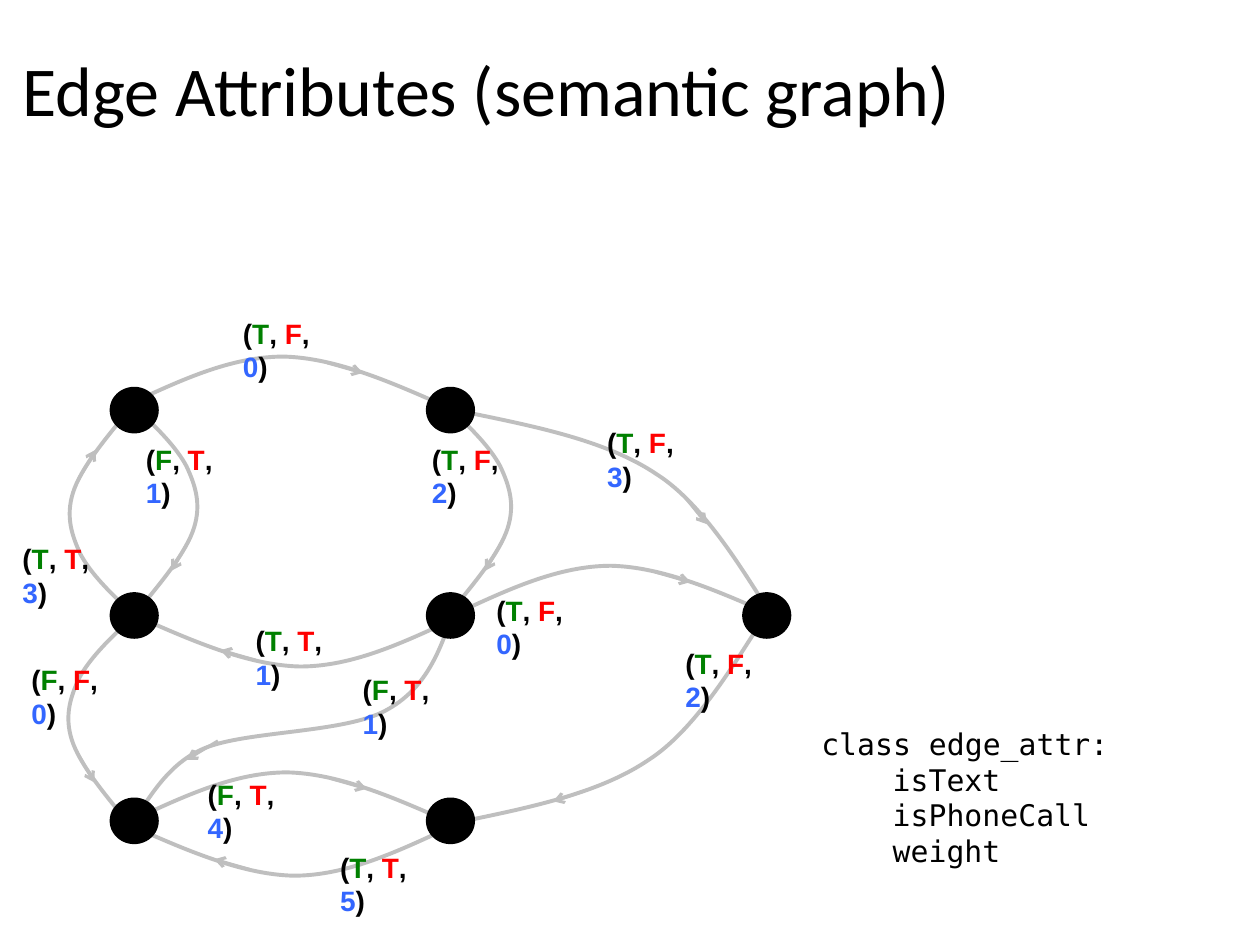
"""Draw a semantic graph whose edges carry three attributes."""
from dataclasses import dataclass

from lxml import etree
from pptx import Presentation, util as u
from pptx.dml import color
from pptx.enum import shapes, text
from pptx.oxml import ns


@dataclass(frozen=True)
class Theme:
    ink: str = "000000"
    edge: str = "BFBFBF"
    green: str = "008000"
    red: str = "FF0000"
    blue: str = "3366FF"
    head: tuple = ("Calibri", 40, False)
    tag: tuple = ("Arial", 16, True)
    code: tuple = ("DejaVu Sans Mono", 17, False)


ARCH = [(0, .38), (.41, .19), (.81, 0), (1.23, 0), (1.65, .01), (2.1, .21), (2.55, .41)]
BOW = [(0, 0), (.15, .14), (.3, .29), (.38, .44), (.45, .59), (.5, .74),
       (.44, .93), (.38, 1.12), (.19, 1.35), (0, 1.58)]
SWEEP = [(0, 0), (-.15, .2), (-.5, .86), (-.92, 1.13), (-1.33, 1.41), (-1.92, 1.52), (-2.5, 1.64)]
WIND = [(0, 0), (.1, -.08), (.23, -.41), (.56, -.55), (.89, -.69), (1.67, -.67),
        (2, -.85), (2.32, -1.02), (2.43, -1.32), (2.53, -1.61)]

CURVES = {
    "arch": (ARCH, [(1.58, .05), (1.86, .13)]),
    "bow": (BOW, [(.4, 1.03), (.26, 1.27)]),
    "sweep": (SWEEP, [(-1.41, 1.37), (-1.68, 1.46)]),
    "dive": (SWEEP, [(-.7, .95), (-.53, .74)]),
    "wind": (WIND, [(.67, -.61), (.42, -.46)]),
}

EDGES = [
    ("bow", 1.02, 4.84, -1, -1), ("bow", 1.1, 3.26, 1, 1),
    ("arch", 1.02, 2.83, 1, 1), ("wind", 1.06, 6.49, 1, 1),
    ("arch", 3.62, 4.49, 1, 1), ("arch", 1.05, 6.13, 1, 1),
    ("arch", 3.56, 6.95, -1, -1), ("arch", 3.61, 5.29, -1, -1),
    ("bow", 1.01, 4.94, -1, 1), ("bow", 3.59, 3.26, 1, 1),
    ("sweep", 6.07, 4.9, 1, 1), ("dive", 6.14, 4.9, 1, -1),
]

NODES = [(0, 0), (1, 2), (1, 0), (1, 1), (2, 1), (0, 1), (0, 2)]

TAGS = [
    (1.83, 2.46, "TF0"), (1.06, 3.46, "FT1"), (4.72, 3.33, "TF3"), (3.33, 3.46, "TF2"),
    (.08, 4.25, "TT3"), (1.93, 4.9, "TT1"), (2.78, 5.29, "FT1"), (1.55, 6.12, "FT4"),
    (2.6, 6.7, "TT5"), (3.84, 4.66, "TF0"), (5.34, 5.08, "TF2"), (.15, 5.21, "FF0"),
]


def inch(val):
    """Turn inches into a length."""
    return u.Cm(2.54 * val)


class Deck:
    """Hold the style and the current slide."""

    def __init__(self, theme):
        """Start a one-slide deck."""
        self.theme = theme
        self.prs = Presentation()
        self.prs.slide_width, self.prs.slide_height = u.Cm(25.4), u.Cm(19.05)
        self.slide = self.prs.slides.add_slide(self.prs.slide_layouts[5])
        self.items = self.slide.shapes

    def run(self, par, words, style, tint):
        """Add one run to a paragraph."""
        run = par.add_run()
        run.text = words
        run.font.name, size, run.font.bold = style
        run.font.size = u.Pt(size)
        run.font.color.rgb = color.RGBColor.from_string(tint)

    def title(self, words, *area):
        """Place and fill the title."""
        item = self.items.title
        item.left, item.top, item.width, item.height = map(inch, area)
        frame = item.text_frame
        frame.vertical_anchor = text.MSO_ANCHOR.MIDDLE
        frame.auto_size = text.MSO_AUTO_SIZE.NONE
        frame.paragraphs[0].alignment = text.PP_ALIGN.LEFT
        self.run(frame.paragraphs[0], words, self.theme.head, self.theme.ink)

    def box(self, *area):
        """Add a wrapping text box and return its frame."""
        frame = self.items.add_textbox(*map(inch, area)).text_frame
        frame.word_wrap = True
        frame.auto_size = text.MSO_AUTO_SIZE.SHAPE_TO_FIT_TEXT
        return frame

    def tag(self, left, top, marks):
        """Add the attribute triple of an edge."""
        look = self.theme
        par = self.box(left, top, .95, .37).paragraphs[0]
        for words, tint in (("(", look.ink), (marks[0], look.green), (",", look.ink),
                            (" " + marks[1], look.red), (", ", look.ink),
                            (marks[2], look.blue), (")", look.ink)):
            self.run(par, words, look.tag, tint)

    def code(self, head, fields, *area):
        """Add a class outline with indented fields."""
        frame = self.box(*area)
        self.run(frame.paragraphs[0], head, self.theme.code, self.theme.ink)
        for field in fields:
            par = frame.add_paragraph()
            par._p.get_or_add_pPr().set("marL", str(u.Cm(1.44)))
            self.run(par, field, self.theme.code, self.theme.ink)

    def node(self, col, row):
        """Add a graph node on the grid."""
        item = self.items.add_shape(
            shapes.MSO_SHAPE.OVAL, inch(.87 + 2.51 * col), inch(3.07 + 1.63 * row),
            inch(.39), inch(.37))
        item.shadow.inherit = False
        item.fill.solid()
        item.fill.fore_color.rgb = color.RGBColor.from_string(self.theme.ink)
        item.line.fill.background()

    def stroke(self, item, width):
        """Give a line the edge colour and a width."""
        item.line.color.rgb = color.RGBColor.from_string(self.theme.edge)
        item.line.width = u.Pt(width)

    def curve(self, points):
        """Add a chain of cubic curves through control points."""
        spots = [(inch(x), inch(y)) for x, y in points]
        form = self.items.build_freeform(*spots[0])
        form.add_line_segments(spots[1:], close=False)
        item = form.convert_to_shape()
        item.shadow.inherit = False
        item.fill.background()
        self.stroke(item, 2.25)
        legs = list(item._element.iter(ns.qn("a:lnTo")))
        for i in range(0, len(legs), 3):
            bend = etree.Element(ns.qn("a:cubicBezTo"))
            legs[i].addprevious(bend)
            for leg in legs[i:i + 3]:
                bend.append(leg[0])
                leg.getparent().remove(leg)

    def arrow(self, start, end):
        """Add a short line with an open arrowhead."""
        item = self.items.add_connector(
            shapes.MSO_CONNECTOR.STRAIGHT, *map(inch, (*start, *end)))
        self.stroke(item, 1.75)
        props = item._element.spPr
        etree.SubElement(props.find(ns.qn("a:ln")), ns.qn("a:tailEnd"), type="arrow")
        etree.SubElement(props, ns.qn("a:effectLst"))

    def edge(self, kind, left, top, flip, turn):
        """Add a mirrored edge curve and its arrow."""
        line, tip = ([(left + flip * x, top + turn * y) for x, y in part]
                     for part in CURVES[kind])
        self.curve(line)
        self.arrow(*tip)


def main():
    """Build and save the slide."""
    deck = Deck(Theme())
    deck.title("Edge Attributes (semantic graph)", .08, .08, 8.67, 1.25)
    for edge in EDGES:
        deck.edge(*edge)
    for node in NODES:
        deck.node(*node)
    for tag in TAGS:
        deck.tag(*tag)
    deck.code("class edge_attr:", ("isText", "isPhoneCall", "weight"), 6.42, 5.71, 3.5, 1.25)
    deck.prs.save("out.pptx")


if __name__ == "__main__":
    main()
